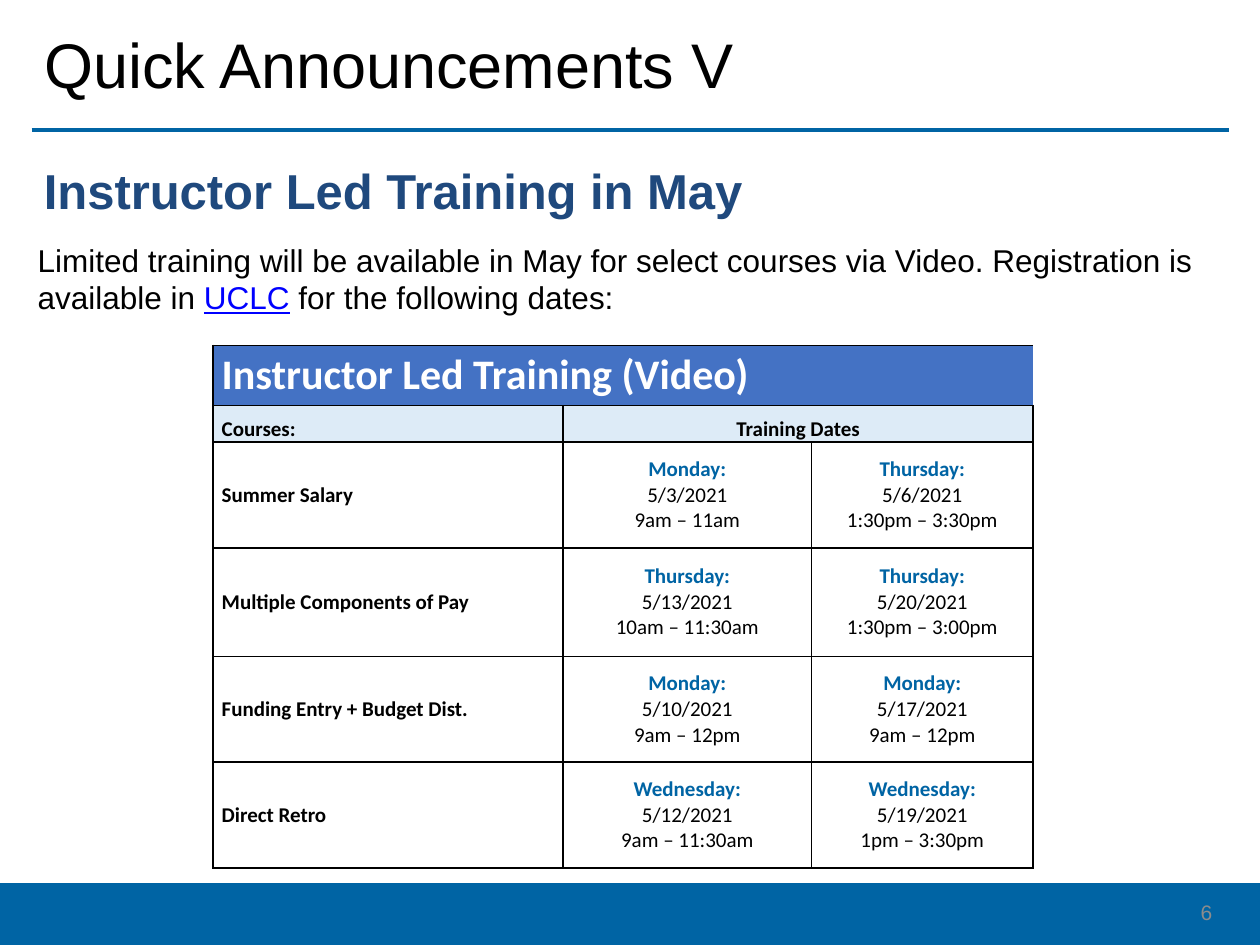
from lxml.etree import SubElement
from pptx import Presentation
from pptx.dml.color import RGBColor
from pptx.enum.shapes import MSO_CONNECTOR, MSO_SHAPE
from pptx.enum.text import MSO_ANCHOR, PP_ALIGN
from pptx.oxml.ns import qn
from pptx.util import Inches, Pt

BLUE = "0064A4"
NAVY = "1F497D"
BLACK = "000000"
WHITE = "FFFFFF"
TABLE_TITLE_FILL = "4472C4"
TABLE_HEAD_FILL = "DDEBF7"

COLUMN_WIDTHS = [2.78, 1.97, 1.76]
ROW_HEIGHTS = [0.48, 0.29, 0.84, 0.86, 0.84, 0.84]
COURSES = [
    ("Summer Salary",
     ("Monday:", "5/3/2021", "9am – 11am"),
     ("Thursday:", "5/6/2021", "1:30pm – 3:30pm")),
    ("Multiple Components of Pay",
     ("Thursday:", "5/13/2021", "10am – 11:30am"),
     ("Thursday:", "5/20/2021", "1:30pm – 3:00pm")),
    ("Funding Entry + Budget Dist.",
     ("Monday:", "5/10/2021", "9am – 12pm"),
     ("Monday:", "5/17/2021", "9am – 12pm")),
    ("Direct Retro",
     ("Wednesday:", "5/12/2021", "9am – 11:30am"),
     ("Wednesday:", "5/19/2021", "1pm – 3:30pm")),
]


def rgb(color):
    return RGBColor.from_string(color)


def add_run(paragraph, text, size, color=BLACK, bold=False, underline=False, font="Arial"):
    run = paragraph.add_run()
    run.text = text
    run.font.name = font
    run.font.size = Pt(size)
    run.font.bold = bold
    run.font.underline = underline
    run.font.color.rgb = rgb(color)


def add_text(slide, left, top, width, height, anchor=MSO_ANCHOR.TOP):
    frame = slide.shapes.add_textbox(
        Inches(left), Inches(top), Inches(width), Inches(height)).text_frame
    frame.word_wrap = True
    frame.vertical_anchor = anchor
    return frame.paragraphs[0]


def add_title(slide, text):
    title = slide.shapes.title
    title.left, title.top = Inches(0.25), Inches(0.05)
    title.width, title.height = Inches(9.5), Inches(0.98)
    title.text_frame.vertical_anchor = MSO_ANCHOR.MIDDLE
    paragraph = title.text_frame.paragraphs[0]
    paragraph.alignment = PP_ALIGN.LEFT
    paragraph.line_spacing = 0.9
    add_run(paragraph, text, 36)


def add_rule(slide):
    rule = slide.shapes.add_connector(
        MSO_CONNECTOR.STRAIGHT, Inches(0.25), Inches(1.03), Inches(9.75), Inches(1.03))
    rule.line.color.rgb = rgb(BLUE)
    rule.line.width = Pt(2.25)
    SubElement(rule._element.spPr, qn("a:effectLst"))


def add_footer(slide, number):
    band = slide.shapes.add_shape(
        MSO_SHAPE.RECTANGLE, Inches(0), Inches(7.01), Inches(10), Inches(0.5))
    band.shadow.inherit = False
    band.fill.solid()
    band.fill.fore_color.rgb = rgb(BLUE)
    band.line.fill.background()
    paragraph = add_text(slide, 7.47, 7.04, 2.25, 0.4, MSO_ANCHOR.MIDDLE)
    paragraph.alignment = PP_ALIGN.RIGHT
    add_run(paragraph, number, 12, "8C8C8C")


def set_borders(cell, open_sides=()):
    properties = cell._tc.get_or_add_tcPr()
    for side in ("lnL", "lnR", "lnT", "lnB"):
        border = SubElement(properties, qn(f"a:{side}"), w=str(Pt(1)))
        if side in open_sides:
            SubElement(border, qn("a:noFill"))
        else:
            fill = SubElement(border, qn("a:solidFill"))
            SubElement(fill, qn("a:srgbClr"), val=BLACK)


def style_cell(cell, fill=None, anchor=MSO_ANCHOR.MIDDLE, open_sides=()):
    set_borders(cell, open_sides)
    cell.margin_left = cell.margin_right = Inches(0.07)
    cell.margin_top = cell.margin_bottom = Inches(0)
    cell.vertical_anchor = anchor
    if fill:
        cell.fill.solid()
        cell.fill.fore_color.rgb = rgb(fill)
    else:
        cell.fill.background()


def write_cell(cell, lines, size=12, color=BLACK, align=PP_ALIGN.LEFT):
    frame = cell.text_frame
    for index, line in enumerate(lines):
        paragraph = frame.add_paragraph() if index else frame.paragraphs[0]
        paragraph.alignment = align
        first = index == 0
        add_run(paragraph, line, size, color if first else BLACK, bold=first, font="Calibri")


def add_schedule(slide):
    table = slide.shapes.add_table(
        len(ROW_HEIGHTS), len(COLUMN_WIDTHS), Inches(1.69), Inches(2.74),
        Inches(sum(COLUMN_WIDTHS)), Inches(sum(ROW_HEIGHTS))).table
    table.first_row = table.horz_banding = False
    for column, width in zip(table.columns, COLUMN_WIDTHS):
        column.width = Inches(width)
    for row, height in zip(table.rows, ROW_HEIGHTS):
        row.height = Inches(height)

    for cell in table.rows[0].cells:
        style_cell(cell, TABLE_TITLE_FILL, open_sides=("lnR",))
    for cell in table.rows[1].cells:
        style_cell(cell, TABLE_HEAD_FILL, MSO_ANCHOR.BOTTOM)
    table.cell(0, 0).merge(table.cell(0, 2))
    table.cell(1, 1).merge(table.cell(1, 2))
    write_cell(table.cell(0, 0), ["Instructor Led Training (Video)"], 24, WHITE)
    write_cell(table.cell(1, 0), ["Courses:"])
    write_cell(table.cell(1, 1), ["Training Dates"], align=PP_ALIGN.CENTER)

    for row, (course, *sessions) in enumerate(COURSES, start=2):
        for cell in table.rows[row].cells:
            style_cell(cell)
        write_cell(table.cell(row, 0), [course])
        for column, session in enumerate(sessions, start=1):
            write_cell(table.cell(row, column), session, color=BLUE, align=PP_ALIGN.CENTER)


def main():
    presentation = Presentation()
    presentation.slide_width = Inches(10)
    presentation.slide_height = Inches(7.5)
    slide = presentation.slides.add_slide(presentation.slide_layouts[5])

    add_rule(slide)
    add_title(slide, "Quick Announcements V")

    heading = add_text(slide, 0.25, 1.28, 9.5, 0.53)
    heading.line_spacing = 0.9
    add_run(heading, "Instructor Led Training in May", 28, NAVY, bold=True)

    intro = add_text(slide, 0.2, 1.86, 9.61, 0.71)
    add_run(intro, "Limited training will be available in May for select courses via Video. "
                   "Registration is available in ", 18)
    add_run(intro, "UCLC", 18, "0000FF", underline=True)
    add_run(intro, " for the following dates:", 18)

    add_schedule(slide)
    add_footer(slide, "6")
    presentation.save("out.pptx")


if __name__ == "__main__":
    main()
